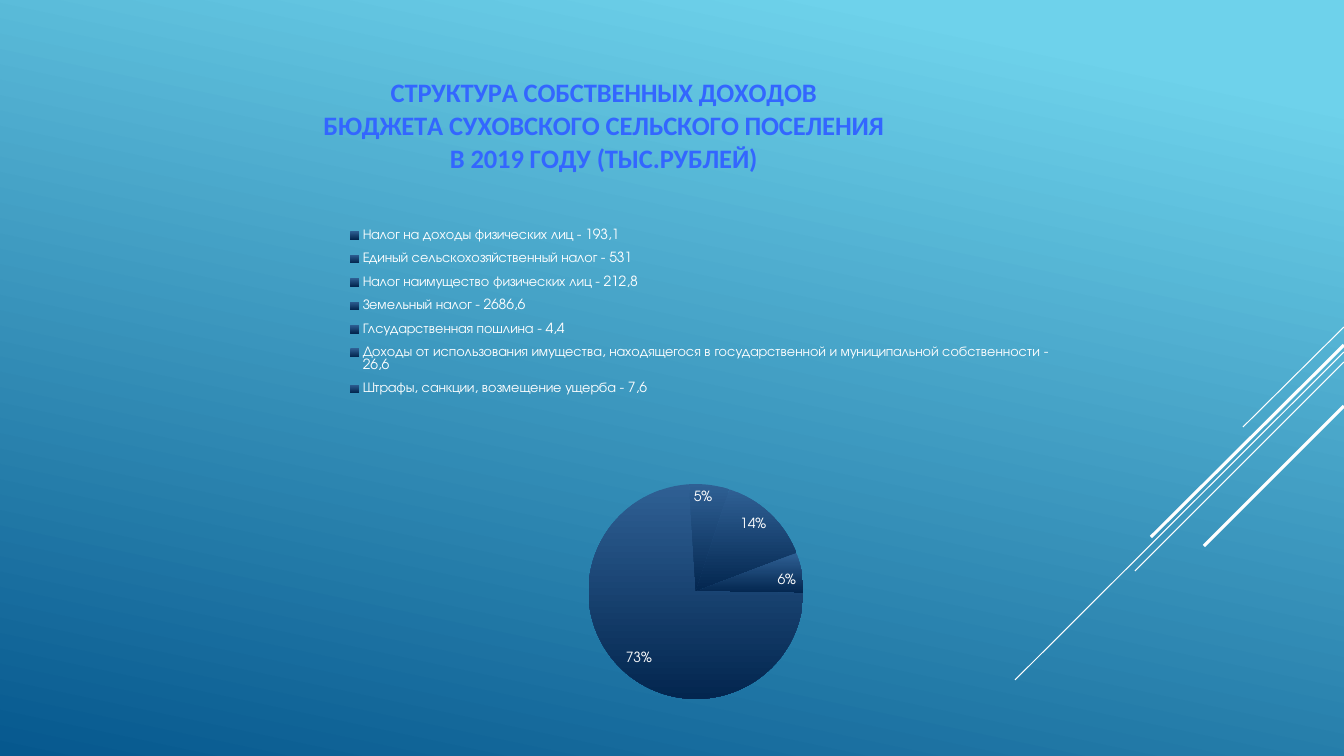
from lxml.etree import SubElement
from pptx import Presentation
from pptx.chart.data import CategoryChartData as Data
from pptx.dml.color import RGBColor as Rgb
from pptx.enum.chart import XL_CHART_TYPE as Kind, XL_LABEL_POSITION as Spot, XL_LEGEND_POSITION as Side
from pptx.enum.shapes import MSO_CONNECTOR as Link
from pptx.enum.text import PP_ALIGN as Align
from pptx.oxml import parse_xml
from pptx.oxml.ns import nsdecls, qn
from pptx.util import Pt

HUES = {"sky": "6ED2EB", "sea": "06588E", "white": "FFFFFF",
        "title": "3366FF", "top": "2F6094", "base": "03264F"}
FONT = "TeX Gyre Adventor"
BOX = (214, 53, 967, 680)


def px(n):
    return round(n * 914400 / 100.8)


def shade(fill, angle, stops):
    fill.gradient()
    fill.gradient_angle = angle
    for stop, (hue, pos) in zip(fill.gradient_stops, stops):
        stop.color.rgb = Rgb.from_string(HUES[hue])
        stop.position = pos


deck = Presentation()
deck.slide_width, deck.slide_height = px(1344), px(756)
slide = deck.slides.add_slide(deck.slide_layouts[6])
shade(slide.background.fill, 258, [("sky", 0.1), ("sea", 1)])

for top, left, end, width in [
    (327, 1243, 427, 0.75),
    (352, 1015, 680, 0.75),
    (362, 1135, 571, 0.75),
    (345, 1151, 537, 2.25),
    (406, 1204, 546, 2.25),
]:
    ray = slide.shapes.add_connector(Link.STRAIGHT, px(1344), px(top), px(left), px(end))
    ray.line.color.rgb = Rgb.from_string(HUES["white"])
    ray.line.width = Pt(width)
    SubElement(ray._element.spPr, qn("a:effectLst"))

data = Data()
data.categories = [
    "Налог на доходы физических лиц - 193,1",
    "Единый сельскохозяйственный налог - 531",
    "Налог наимущество физических лиц - 212,8",
    "Земельный налог - 2686,6",
    "Глсударственная пошлина - 4,4",
    "Доходы от использования имущества, находящегося в государственной "
    "и муниципальной собственности - 26,6",
    "Штрафы, санкции, возмещение ущерба - 7,6",
]
parts = [5, 14, 6, 73, 0, 1, 0]
data.add_series("Доходы", parts)
chart = slide.shapes.add_chart(Kind.PIE, *map(px, BOX), data).chart
chart.font.name = FONT
chart.font.size = Pt(10)
chart.font.color.rgb = Rgb.from_string(HUES["white"])

frame = chart.chart_title.text_frame
frame.text = ("СТРУКТУРА СОБСТВЕННЫХ ДОХОДОВ\n"
              "БЮДЖЕТА СУХОВСКОГО СЕЛЬСКОГО ПОСЕЛЕНИЯ\n"
              "В 2019 ГОДУ (ТЫС.РУБЛЕЙ)")
for para in frame.paragraphs:
    para.alignment = Align.CENTER
    for run in para.runs:
        run.font.name = "Calibri"
        run.font.size = Pt(19)
        run.font.bold = True
        run.font.color.rgb = Rgb.from_string(HUES["title"])

chart.has_legend = True
legend = chart.legend
legend.position = Side.TOP
legend.include_in_layout = False
legend.font.name = FONT
legend.font.size = Pt(10)
legend.font.color.rgb = Rgb.from_string(HUES["white"])

plot = chart.plots[0]
plot.vary_by_categories = True
pie = plot.series[0]
for i in range(len(parts)):
    form = pie.points[i].format
    shade(form.fill, 270, [("top", 0), ("base", 1)])
    form.line.fill.background()

marks = pie.data_labels
marks.show_value = True
marks.number_format = '0"%"'
marks.number_format_is_linked = False
marks.position = Spot.INSIDE_END
marks.font.name = FONT
marks.font.size = Pt(10)
marks.font.color.rgb = Rgb.from_string(HUES["white"])
for i in (6, 5, 4):
    marks._element.insert(0, parse_xml(
        f'<c:dLbl {nsdecls("c")}><c:idx val="{i}"/><c:delete val="1"/></c:dLbl>'))

root = chart._chartSpace.chart
for tag, prior, inner, area in [
    ("c:title", "c:tx", False, (320, 73, 564, 98)),
    ("c:legend", "c:legendPos", False, (342, 218, 716, 188)),
    ("c:plotArea", None, True, (525, 484, 341, 215)),
]:
    node = root.find(qn(tag))
    for old in node.findall(qn("c:layout")):
        node.remove(old)
    x, y, w, h = area
    rows = [("xMode", "edge"), ("yMode", "edge"),
            ("x", round((x - BOX[0]) / BOX[2], 3)), ("y", round((y - BOX[1]) / BOX[3], 3)),
            ("w", round(w / BOX[2], 3)), ("h", round(h / BOX[3], 3))]
    if inner:
        rows.insert(0, ("layoutTarget", "inner"))
    body = "".join(f'<c:{key} val="{val}"/>' for key, val in rows)
    place = parse_xml(f'<c:layout {nsdecls("c")}><c:manualLayout>{body}</c:manualLayout></c:layout>')
    if prior:
        node.find(qn(prior)).addnext(place)
    else:
        node.insert(0, place)

deck.save("out.pptx")
